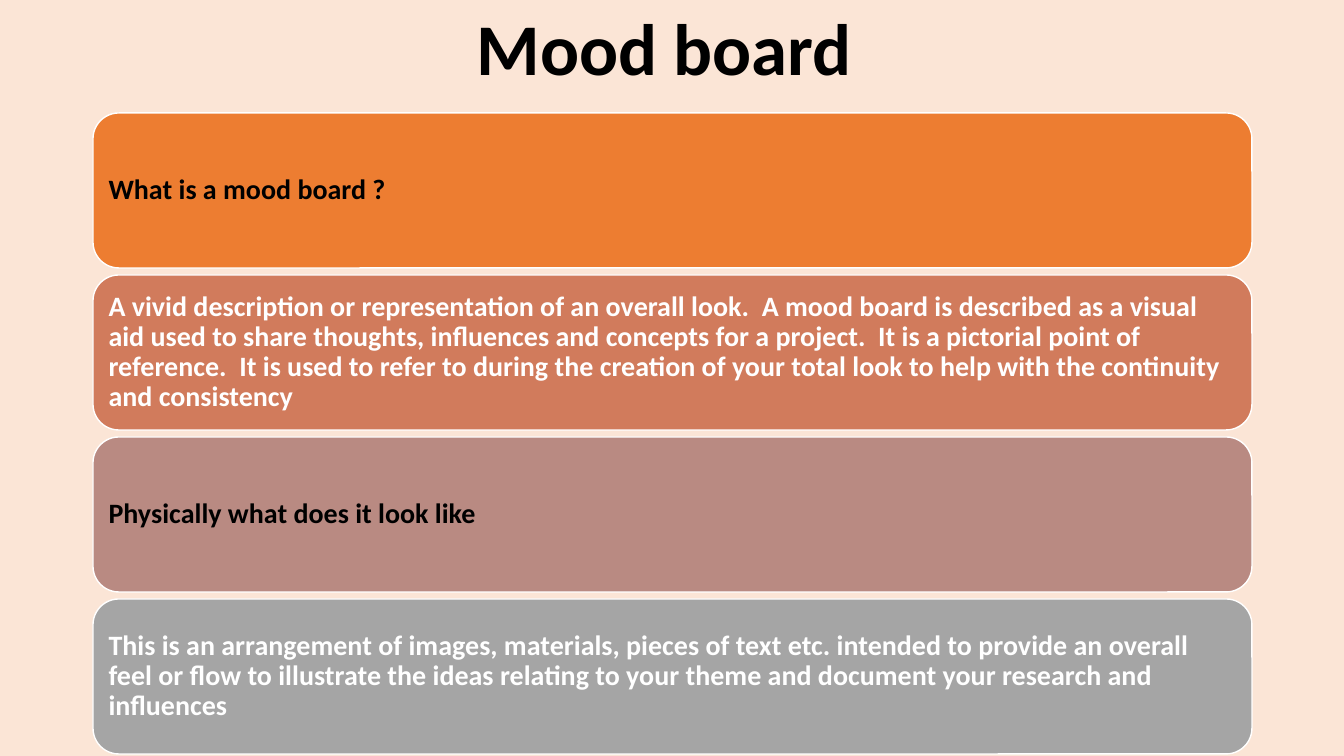
from pptx import Presentation
from pptx.dml.color import RGBColor
from pptx.enum.shapes import MSO_SHAPE
from pptx.enum.text import MSO_ANCHOR, PP_ALIGN
from pptx.util import Pt

SCALE = 12192000 / 1344
COLORS = {
    "back": "FBE5D6",
    "black": "000000",
    "white": "FFFFFF",
    "orange": "ED7D31",
    "rust": "D17B5C",
    "rose": "B98A82",
    "gray": "A5A5A5",
}
LEFT, WIDTH = 93, 1159
TOP, HEIGHT, PITCH = 113, 155, 162
INSET = 8
PANELS = [
    ("orange", "black", "What is a mood board ?"),
    ("rust", "white",
     "A vivid description or representation of an overall look.  "
     "A mood board is described as a visual aid used to share thoughts, "
     "influences and concepts for a project.  It is a pictorial point of "
     "reference.  It is used to refer to during the creation of your total "
     "look to help with the continuity and consistency "),
    ("rose", "black", "Physically what does it look like "),
    ("gray", "white",
     "This is an arrangement of images, materials, pieces of text etc. "
     "intended to provide an overall feel or flow to illustrate the ideas "
     "relating to your theme and document your research and influences "),
]


def px(count):
    return round(count * SCALE)


def write(frame, text, size, color, align):
    frame.word_wrap = True
    frame.vertical_anchor = MSO_ANCHOR.MIDDLE
    para = frame.paragraphs[0]
    para.alignment = align
    para.line_spacing = 0.9
    run = para.add_run()
    run.text = text
    run.font.name = "Calibri"
    run.font.size = Pt(size)
    run.font.bold = True
    run.font.color.rgb = RGBColor.from_string(COLORS[color])


deck = Presentation()
deck.slide_width, deck.slide_height = px(1344), px(756)
slide = deck.slides.add_slide(deck.slide_layouts[5])
slide.background.fill.solid()
slide.background.fill.fore_color.rgb = RGBColor.from_string(COLORS["back"])

title = slide.shapes.title
title.left, title.top = px(LEFT), px(-8)
title.width, title.height = px(WIDTH), px(120)
write(title.text_frame, "Mood board ", 52, "black", PP_ALIGN.CENTER)

for row, (fill, ink, text) in enumerate(PANELS):
    panel = slide.shapes.add_shape(
        MSO_SHAPE.ROUNDED_RECTANGLE,
        px(LEFT), px(TOP + row * PITCH), px(WIDTH), px(HEIGHT))
    panel.shadow.inherit = False
    panel.fill.solid()
    panel.fill.fore_color.rgb = RGBColor.from_string(COLORS[fill])
    panel.line.color.rgb = RGBColor.from_string(COLORS["white"])
    panel.line.width = Pt(1)
    frame = panel.text_frame
    frame.margin_left = frame.margin_right = px(INSET)
    frame.margin_top = frame.margin_bottom = px(INSET)
    write(frame, text, 20, ink, PP_ALIGN.LEFT)

deck.save("out.pptx")
